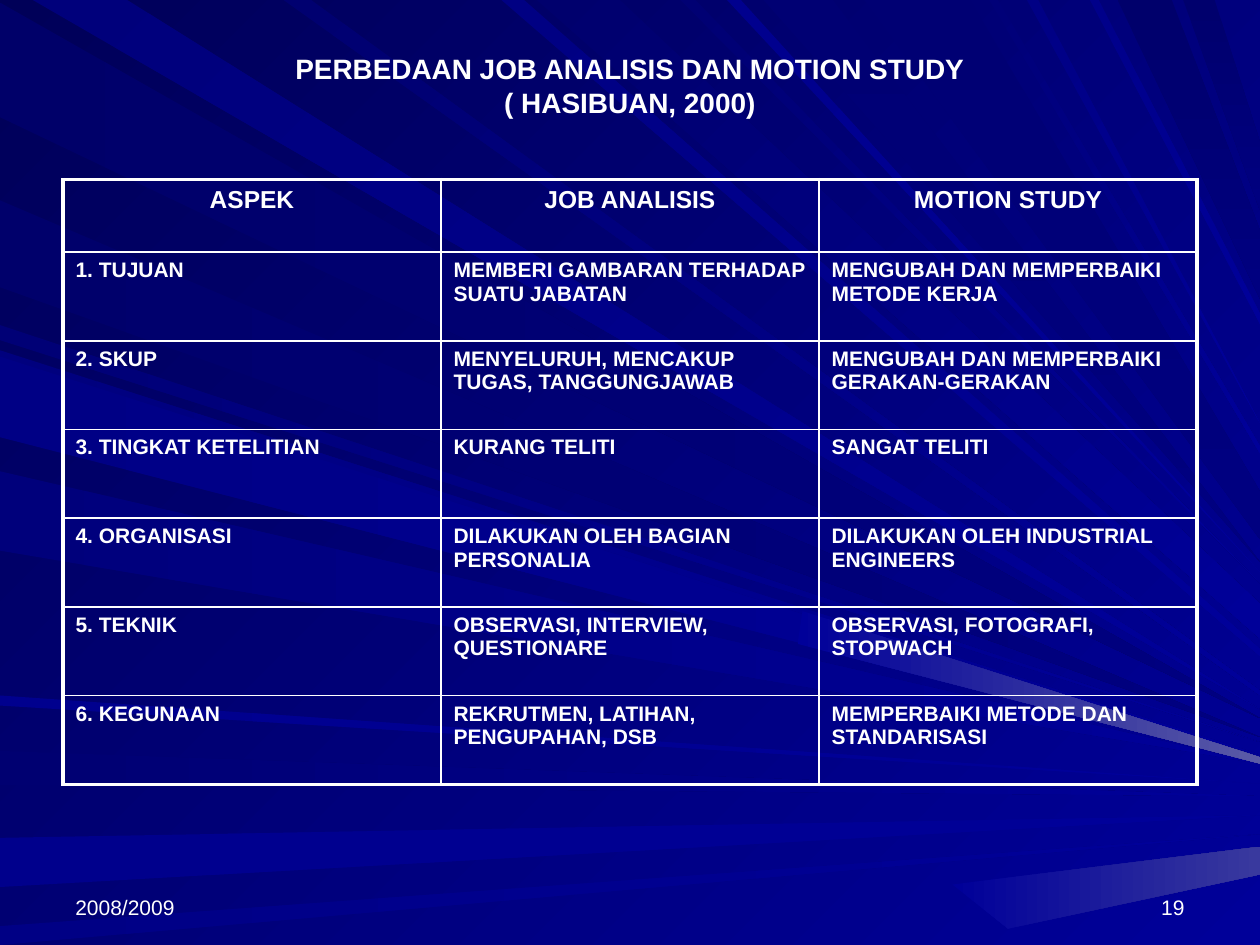
from lxml import etree
from pptx import Presentation
from pptx.dml.color import RGBColor
from pptx.enum.text import MSO_ANCHOR, PP_ALIGN
from pptx.oxml.ns import qn
from pptx.util import Inches, Pt

LEFT, CENTER, RIGHT = PP_ALIGN.LEFT, PP_ALIGN.CENTER, PP_ALIGN.RIGHT
MIDDLE, BOTTOM = MSO_ANCHOR.MIDDLE, MSO_ANCHOR.BOTTOM

FONT = "Arial"
WIDTH, HEIGHT = Inches(10), Inches(7.5)
COLUMNS = 1000  # the rays lie on a grid of 1000 columns by 750 rows
OUTER_BORDER, INNER_BORDER = Pt(2.25), Pt(1)

# Blue shades are named by their blue channel.
SHADES = "58 69 6B 6D 70 71 73 76 78 7B 7E 80 83 85 8A 8C 8E 99".split()
COLOURS = {
    "white": "FFFFFF",
    "low glow": "39399E",
    "high glow": "5A5AA6",
    **{shade: "0000" + shade for shade in SHADES},
}

# Shades, then the rows where a ray leaves the left edge and its tip's row
LEFT_FAN = [
    ("69", "80", 2, 93, 570),
    ("71", "99", 596, 623, 632),
    ("8C", "99", 665, 704, 647),
    ("85", "99", 735, 750, 662),
    ("76", "99", 258, 270, 589),
    ("6B", "80", 159, 228, 585),
    ("7E", "99", 278, 342, 599),
    ("7B", "99", 374, 437, 606),
    ("8E", "99", 552, 560, 622),
    ("85", "99", 283, 347, 604),
]
# Shades, the columns where a ray leaves the top edge, its tip's row and
# half the height of that tip
TOP_FAN = [
    ("7B", "99", 26, 101, 563, 0),
    ("83", "99", 398, 416, 518, 3),
    ("6D", "99", 426, 492, 493, 14),
    ("73", "99", 540, 552, 463, 0),
    ("73", "80", 606, 661, 446, 0),
    ("6B", "80", 887, 930, 210, 27),
    ("6D", "80", 939, 964, 140, 27),
    ("70", "99", 225, 247, 550, 2),
    ("8E", "99", 577, 588, 454, 0),
    ("73", "80", 686, 770, 409, 19),
    ("78", "99", 785, 792, 357, 3),
    ("85", "99", 815, 824, 336, 0),
    ("8A", "99", 865, 872, 253, 4),
]
LIT_TIPS = [
    ("low glow", [(1000, 694), (1000, 672), (756, 702), (800, 737)]),
    ("high glow", [(1000, 601), (637, 485), (633, 511), (1000, 606)]),
]

COMPARISON = [
    ("ASPEK", "JOB ANALISIS", "MOTION STUDY"),
    ("1. TUJUAN", "MEMBERI GAMBARAN TERHADAP SUATU JABATAN",
     "MENGUBAH DAN MEMPERBAIKI METODE KERJA"),
    ("2. SKUP", "MENYELURUH, MENCAKUP TUGAS, TANGGUNGJAWAB",
     "MENGUBAH DAN MEMPERBAIKI GERAKAN-GERAKAN"),
    ("3. TINGKAT KETELITIAN", "KURANG TELITI", "SANGAT TELITI"),
    ("4. ORGANISASI", "DILAKUKAN OLEH BAGIAN PERSONALIA",
     "DILAKUKAN OLEH INDUSTRIAL ENGINEERS"),
    ("5. TEKNIK", "OBSERVASI, INTERVIEW, QUESTIONARE",
     "OBSERVASI, FOTOGRAFI, STOPWACH"),
    ("6. KEGUNAAN", "REKRUTMEN, LATIHAN, PENGUPAHAN, DSB",
     "MEMPERBAIKI METODE DAN STANDARISASI"),
]


def colour(name):
    return RGBColor.from_string(COLOURS[name])


def share_box(left, top, width, height):
    """Turn shares of the slide's size into lengths."""
    return [round(share * size) for share, size in
            zip((left, top, width, height), (WIDTH, HEIGHT, WIDTH, HEIGHT))]


def paint_gradient(fill, first, last, angle):
    """Fill with a gradient at a clockwise angle."""
    fill.gradient()
    fill.gradient_angle = -angle % 360
    for stop, name in zip(fill.gradient_stops, (first, last)):
        stop.color.rgb = colour(name)


def write_text(frame, text, size=12, bold=False, align=LEFT):
    paragraph = frame.paragraphs[0]
    paragraph.text = text
    paragraph.alignment = align
    for run in paragraph.runs:
        run.font.name = FONT
        run.font.size = Pt(size)
        run.font.bold = bold
        run.font.color.rgb = colour("white")


def add_text(slide, box, text, anchor=BOTTOM, **text_format):
    frame = slide.shapes.add_textbox(*box).text_frame
    frame.word_wrap = True
    frame.vertical_anchor = anchor
    write_text(frame, text, **text_format)


def add_ray(slide, points, first, last, angle=0):
    builder = slide.shapes.build_freeform(*points[0], scale=WIDTH / COLUMNS)
    builder.add_line_segments(points[1:], close=True)
    ray = builder.convert_to_shape()
    ray.shadow.inherit = False
    ray.line.fill.background()
    paint_gradient(ray.fill, first, last, angle)


def add_background(slide):
    paint_gradient(slide.background.fill, "58", "99", 45)
    for first, last, upper, lower, tip in LEFT_FAN:
        add_ray(slide, [(0, upper), (0, lower), (COLUMNS, tip)], first, last)
    for first, last, start, end, tip, spread in TOP_FAN:
        points = [(start, 0), (COLUMNS, tip + spread), (COLUMNS, tip - spread), (end, 0)]
        add_ray(slide, points, first, last, angle=90 if last == "80" else 45)
    for glow, points in LIT_TIPS:
        add_ray(slide, points, "99", glow)


def set_borders(cell, widths):
    """Draw the left, right, top and bottom borders, in that order."""
    properties = cell._tc.get_or_add_tcPr()
    for index, (side, width) in enumerate(zip("LRTB", widths)):
        line = etree.Element(qn(f"a:ln{side}"), w=str(width))
        fill = etree.SubElement(line, qn("a:solidFill"))
        etree.SubElement(fill, qn("a:srgbClr"), val=COLOURS["white"])
        properties.insert(index, line)


def add_comparison(slide, box, rows, header_share=0.12):
    row_count, column_count = len(rows), len(rows[0])
    table = slide.shapes.add_table(row_count, column_count, *box).table
    table.first_row = table.horz_banding = False
    header_height = round(box[3] * header_share)
    body_height = (box[3] - header_height) // (row_count - 1)
    for row_index, texts in enumerate(rows):
        is_header = row_index == 0
        table.rows[row_index].height = header_height if is_header else body_height
        for column_index, text in enumerate(texts):
            cell = table.cell(row_index, column_index)
            cell.fill.background()
            write_text(cell.text_frame, text, bold=True,
                       size=14 if is_header else 12,
                       align=CENTER if is_header else LEFT)
            on_edge = (column_index == 0, column_index == column_count - 1,
                       is_header, row_index == row_count - 1)
            set_borders(cell, [OUTER_BORDER if edge else INNER_BORDER for edge in on_edge])


def add_footer(slide, box, period, number):
    left, top, width, height = box
    part = round(width * 0.26)
    add_text(slide, (left, top, part, height), period)
    add_text(slide, (left + width - part, top, part, height), number, align=RIGHT)


def main():
    presentation = Presentation()
    presentation.slide_width, presentation.slide_height = WIDTH, HEIGHT
    slide = presentation.slides.add_slide(presentation.slide_layouts[6])
    add_background(slide)
    add_footer(slide, share_box(0.05, 0.91, 0.9, 0.07), "2008/2009", "19")
    add_text(slide, share_box(0.05, 0.04, 0.9, 0.1),
             "PERBEDAAN JOB ANALISIS DAN MOTION STUDY\v( HASIBUAN, 2000)",
             anchor=MIDDLE, size=16, bold=True, align=CENTER)
    add_comparison(slide, share_box(0.05, 0.19, 0.9, 0.64), COMPARISON)
    presentation.save("out.pptx")


if __name__ == "__main__":
    main()
